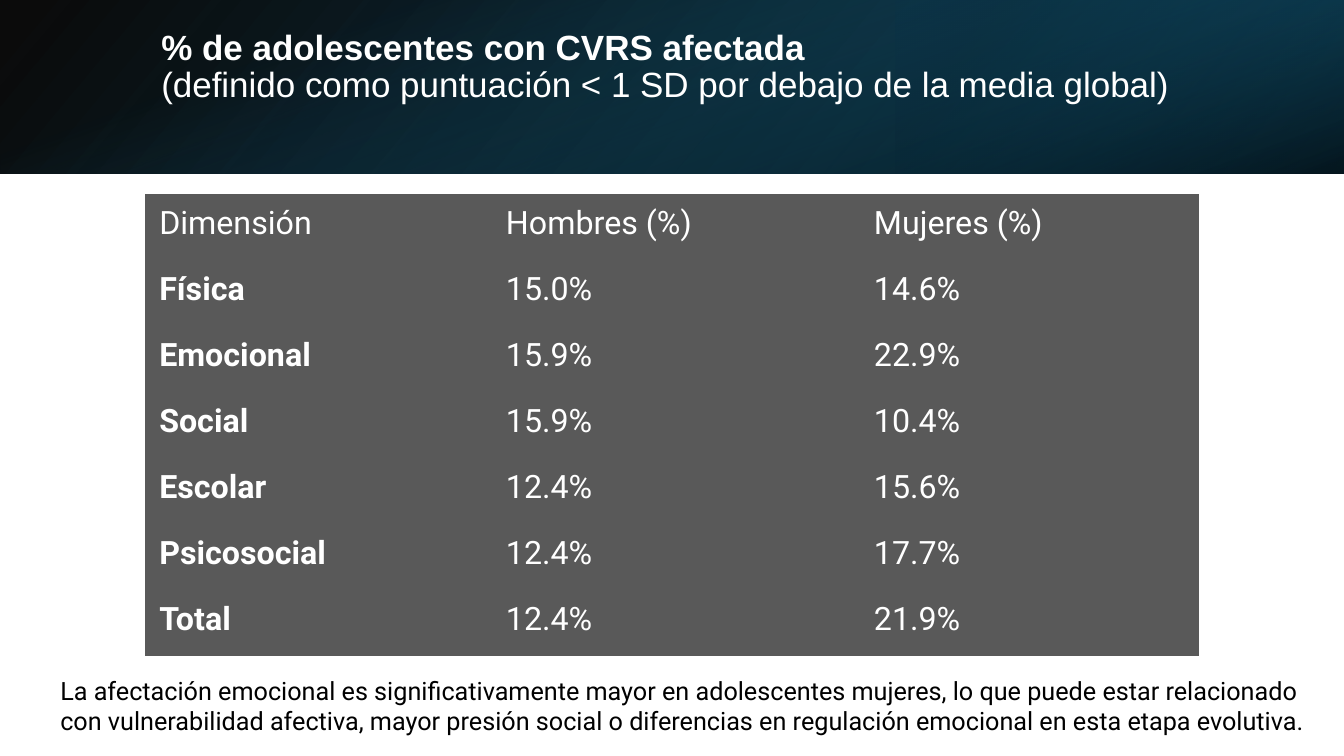
from lxml.etree import SubElement
from pptx import Presentation
from pptx.dml.color import RGBColor
from pptx.enum.shapes import MSO_SHAPE
from pptx.enum.text import MSO_ANCHOR, MSO_AUTO_SIZE, PP_ALIGN
from pptx.oxml.ns import qn
from pptx.util import Inches, Pt

BLACK = RGBColor(0x00, 0x00, 0x00)
WHITE = RGBColor(0xFF, 0xFF, 0xFF)
GRAY = RGBColor(0x59, 0x59, 0x59)
TEAL = RGBColor(0x15, 0x60, 0x82)
DARK_TEAL = RGBColor(0x10, 0x48, 0x62)
NAVY = RGBColor(0x0B, 0x30, 0x41)
NO_STYLE_NO_GRID = "{2D5ABB26-0587-4C30-8999-92F81FD0307C}"

presentation = Presentation()
presentation.slide_width = Inches(13.33)
presentation.slide_height = Inches(7.5)
WIDTH, HEIGHT = presentation.slide_width, presentation.slide_height
COL, ROW = WIDTH / 100, HEIGHT / 100
BANNER = 23 * ROW

slide = presentation.slides.add_slide(presentation.slide_layouts[5])


def add_text(paragraph, text, font_name, size, color, bold=False):
    run = paragraph.add_run()
    run.text = text
    run.font.name = font_name
    run.font.size = Pt(size)
    run.font.color.rgb = color
    run.font.bold = bold


# Banner: three translucent gradients; stops are (position, colour, opacity %)
layers = [
    ((0, 0, WIDTH, BANNER), 0, True, 140,
     [(0, BLACK, 96), (1, DARK_TEAL, 100)]),
    ((WIDTH * 2 / 3, 0, WIDTH / 3, BANNER), 180, True, 320,
     [(0.19, NAVY, 68), (1, TEAL, 79)]),
    (((WIDTH - BANNER) / 2, (BANNER - WIDTH) / 2, BANNER, WIDTH), 90, False, 340,
     [(0.23, TEAL, 0), (0.99, BLACK, 74)]),
]
for box, rotation, flipped, angle, stops in layers:
    layer = slide.shapes.add_shape(MSO_SHAPE.RECTANGLE, *map(int, box))
    layer.rotation = rotation
    layer.shadow.inherit = False
    layer.line.fill.background()
    layer.fill.gradient()
    layer.fill.gradient_angle = 360 - angle
    for stop, (position, color, opacity) in zip(layer.fill.gradient_stops, stops):
        stop.position = position
        stop.color.rgb = color
    for tint, (_, _, opacity) in zip(layer._element.spPr.iter(qn("a:srgbClr")), stops):
        SubElement(tint, qn("a:alpha")).set("val", str(opacity * 1000))
    if flipped:
        layer._element.spPr.find(qn("a:xfrm")).set("flipH", "1")

# Title, brought in front of the banner
title = slide.shapes.title
slide.shapes._spTree.append(title._element)
title.left, title.top = int(11.25 * COL), int(5.07 * ROW)
title.width, title.height = int(82.37 * COL), int(12.8 * ROW)
heading = title.text_frame
heading.word_wrap = True
heading.auto_size = MSO_AUTO_SIZE.NONE
heading.vertical_anchor = MSO_ANCHOR.MIDDLE
heading.margin_bottom = Inches(0.43)
for index, (line, bold) in enumerate([
    ("% de adolescentes con CVRS afectada", True),
    ("(definido como puntuación < 1 SD por debajo de la media global)", False),
]):
    paragraph = heading.add_paragraph() if index else heading.paragraphs[0]
    paragraph.alignment = PP_ALIGN.LEFT
    paragraph.line_spacing = 0.9
    paragraph.space_before = Pt(0)
    add_text(paragraph, line, "Arial", 25, WHITE, bold)

# Share of adolescents affected, by dimension and sex
dimensions = [
    ("Dimensión", "Hombres (%)", "Mujeres (%)"),
    ("Física", "15.0%", "14.6%"),
    ("Emocional", "15.9%", "22.9%"),
    ("Social", "15.9%", "10.4%"),
    ("Escolar", "12.4%", "15.6%"),
    ("Psicosocial", "12.4%", "17.7%"),
    ("Total", "12.4%", "21.9%"),
]
column_shares = [25.8, 27.38, 25.2]
results = slide.shapes.add_table(
    len(dimensions), len(column_shares), int(10.8 * COL), int(25.6 * ROW),
    int(sum(column_shares) * COL), int(61.2 * ROW)).table
results.first_row = results.horz_banding = False
results._tbl.tblPr.find(qn("a:tableStyleId")).text = NO_STYLE_NO_GRID
for column, share in zip(results.columns, column_shares):
    column.width = int(share * COL)
for r, values in enumerate(dimensions):
    for c, value in enumerate(values):
        cell = results.cell(r, c)
        cell.fill.solid()
        cell.fill.fore_color.rgb = GRAY
        cell.vertical_anchor = MSO_ANCHOR.MIDDLE
        cell.margin_left = cell.margin_right = cell.margin_bottom = Inches(0.14)
        cell.margin_top = Inches(0.07)
        add_text(cell.text_frame.paragraphs[0], value, "Roboto", 23, WHITE,
                 bold=r > 0 and c == 0)

# Conclusion
conclusion = slide.shapes.add_textbox(
    int(3.75 * COL), int(88.67 * ROW), int(94.6 * COL), int(9.47 * ROW)).text_frame
conclusion.word_wrap = True
conclusion.auto_size = MSO_AUTO_SIZE.SHAPE_TO_FIT_TEXT
add_text(
    conclusion.paragraphs[0],
    "La afectación emocional es significativamente mayor en adolescentes mujeres, "
    "lo que puede estar relacionado con vulnerabilidad afectiva, mayor presión social "
    "o diferencias en regulación emocional en esta etapa evolutiva.",
    "Roboto", 18, BLACK)

presentation.save("out.pptx")
